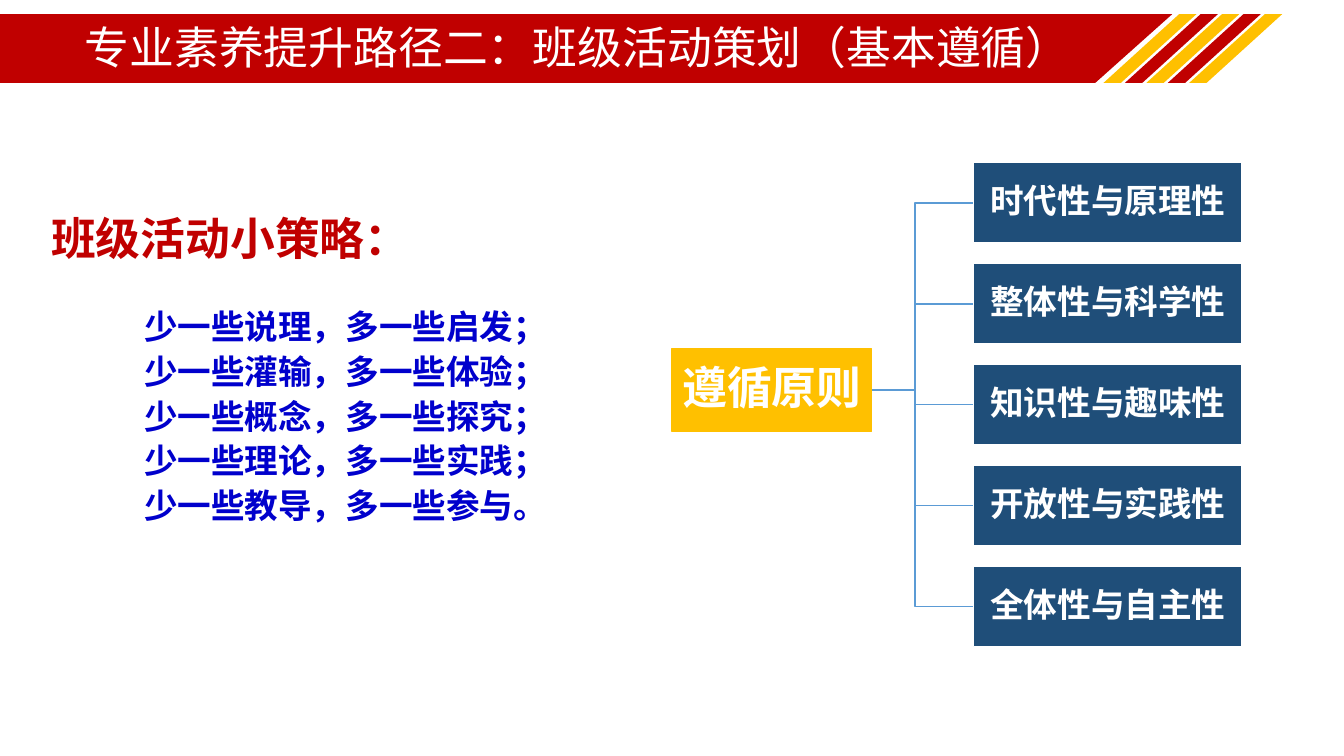
from lxml import etree
from pptx import Presentation
from pptx.dml.color import RGBColor
from pptx.enum.shapes import MSO_SHAPE
from pptx.enum.text import MSO_ANCHOR, MSO_AUTO_SIZE, PP_ALIGN
from pptx.oxml.ns import qn
from pptx.util import Cm, Pt

RED = RGBColor(0xC0, 0x00, 0x00)
GOLD = RGBColor(0xFF, 0xC0, 0x00)
NAVY = RGBColor(0x1F, 0x4E, 0x79)
SKY = RGBColor(0x5B, 0x9B, 0xD5)
BLUE = RGBColor(0x00, 0x00, 0xCC)
WHITE = RGBColor(0xFF, 0xFF, 0xFF)

RECTANGLE = MSO_SHAPE.RECTANGLE
PARALLELOGRAM = MSO_SHAPE.PARALLELOGRAM
MIDDLE = MSO_ANCHOR.MIDDLE
LEFT, CENTER = PP_ALIGN.LEFT, PP_ALIGN.CENTER
FIXED = MSO_AUTO_SIZE.NONE

LATIN_FONT = "Roboto"
CHINESE_FONT = "Noto Sans CJK SC"

TITLE = "专业素养提升路径二：班级活动策划（基本遵循）"
HEADING = "班级活动小策略："
STRATEGIES = [
    "少一些说理，多一些启发；",
    "少一些灌输，多一些体验；",
    "少一些概念，多一些探究；",
    "少一些理论，多一些实践；",
    "少一些教导，多一些参与。",
]
ROOT = "遵循原则"
PRINCIPLES = [
    "时代性与原理性",
    "整体性与科学性",
    "知识性与趣味性",
    "开放性与实践性",
    "全体性与自主性",
]


def set_values(target, values):
    for name, value in values.items():
        setattr(target, name, value)


def write(box, lines, size, color, bold=True, name=LATIN_FONT, **layout):
    """Fill a box with one paragraph per line; layout holds paragraph values."""
    frame = box.text_frame
    frame.word_wrap = True
    for index, line in enumerate(lines):
        para = frame.add_paragraph() if index else frame.paragraphs[0]
        set_values(para, layout)
        span = para.add_run()
        span.text = line
        set_values(span.font, {"size": Pt(size), "bold": bold, "name": name})
        span.font.color.rgb = color
        properties = span.font.fill._xPr
        etree.SubElement(properties, qn("a:ea"), typeface=CHINESE_FONT)


def add_block(page, kind, left, top, width, height, color, edge=None):
    block = page.shapes.add_shape(kind, Cm(left), Cm(top), Cm(width), Cm(height))
    block.shadow.inherit = False
    block.fill.solid()
    block.fill.fore_color.rgb = color
    if edge is None:
        block.line.fill.background()
    else:
        block.line.color.rgb = edge
        block.line.width = Pt(1)
    return block


def add_banner(page, left, top, width, height):
    """Slanted red band, five stripes after it, and the title on top."""
    band = add_block(page, PARALLELOGRAM, left, top, width, height, RED)
    band.adjustments[0] = 1.12
    first_stripe = left + width - 1.73
    for index in range(5):
        stripe = add_block(page, PARALLELOGRAM, first_stripe + 0.54 * index, top,
                           2.34, height, RED if index % 2 else GOLD)
        stripe.adjustments[0] = 1.1

    title = page.shapes.title
    set_values(title, {"left": Cm(left + 4.19), "top": Cm(top + 0.17),
                       "width": Cm(29.21), "height": Cm(1.45)})
    set_values(title.text_frame, {"auto_size": FIXED, "vertical_anchor": MIDDLE})
    write(title, [TITLE], 32, WHITE, bold=False, alignment=LEFT, line_spacing=0.9)
    title.element.getparent().append(title.element)


def add_strategies(page, left, top):
    heading = page.shapes.add_textbox(Cm(left), Cm(top), Cm(10.03), Cm(1.63))
    write(heading, [HEADING], 32, RED)
    body = page.shapes.add_textbox(Cm(left + 2.34), Cm(top + 2.29), Cm(15.34), Cm(5.87))
    write(body, STRATEGIES, 24, BLUE, name=CHINESE_FONT, line_spacing=Pt(32))


def add_node(page, label, size, left, top, width, height, color, edge):
    node = add_block(page, RECTANGLE, left, top, width, height, color, edge)
    inset = Cm(0.06)
    set_values(node.text_frame, {
        "vertical_anchor": MIDDLE, "margin_left": inset, "margin_right": inset,
        "margin_top": inset, "margin_bottom": inset})
    write(node, [label], size, WHITE, alignment=CENTER, line_spacing=0.9)


def add_branch(page, start, bend, end):
    """Elbow line between two (x, y) points, turning at x = bend."""
    points = [start, (bend, start[1]), (bend, end[1]), end]
    corners = [(Cm(x), Cm(y)) for x, y in points]
    builder = page.shapes.build_freeform(*corners[0])
    builder.add_line_segments(corners[1:], close=False)
    branch = builder.convert_to_shape()
    branch.shadow.inherit = False
    branch.fill.background()
    branch.line.color.rgb = SKY
    branch.line.width = Pt(1)


def add_principle_tree(page, left, top, width, height):
    """Root box on the left, evenly spaced principles on the right."""
    root_width, root_height = 5.03, 2.08
    node_width, node_height = 6.76, 2.03
    node_left = left + width - node_width
    pitch = (height - node_height) / (len(PRINCIPLES) - 1)
    middle = top + height / 2 - 0.37
    root_right = left + root_width

    for index, label in enumerate(PRINCIPLES):
        node_top = top + pitch * index
        add_branch(page, (root_right, middle), root_right + 1.09,
                   (node_left, node_top + node_height / 2))
        add_node(page, label, 24, node_left, node_top, node_width, node_height,
                 NAVY, WHITE)
    add_node(page, ROOT, 32, left, middle - root_height / 2, root_width, root_height,
             GOLD, GOLD)


def main():
    deck = Presentation()
    deck.slide_width, deck.slide_height = Cm(33.87), Cm(19.05)
    page = deck.slides.add_slide(deck.slide_layouts[5])
    add_banner(page, -2.31, 0.36, 31.85, 1.73)
    add_principle_tree(page, 16.94, 4.1, 14.36, 12.2)
    add_strategies(page, 1.04, 5.18)
    deck.save("out.pptx")


if __name__ == "__main__":
    main()
